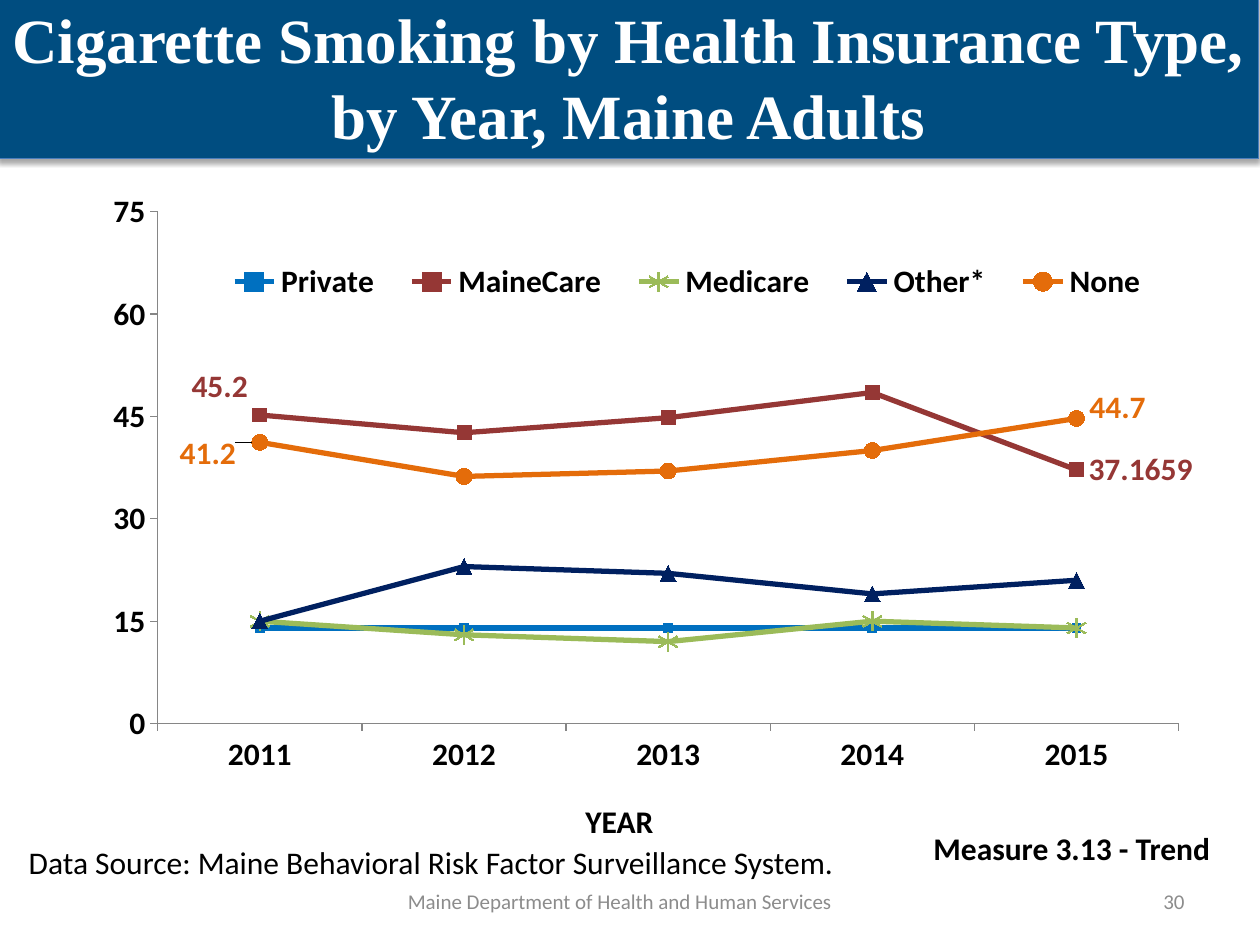
from dataclasses import dataclass
from typing import Any

from lxml.etree import SubElement
from pptx import Presentation
from pptx.chart.data import CategoryChartData
from pptx.dml.color import RGBColor
from pptx.enum.chart import XL_CHART_TYPE, XL_LABEL_POSITION, XL_LEGEND_POSITION, XL_MARKER_STYLE, XL_TICK_MARK
from pptx.enum.shapes import MSO_SHAPE
from pptx.enum.text import MSO_ANCHOR, PP_ALIGN
from pptx.oxml import parse_xml
from pptx.oxml.ns import nsdecls, qn
from pptx.util import Inches, Pt

COLUMNS, ROWS = 100, 75
SLIDE_WIDTH, SLIDE_HEIGHT = Inches(10), Inches(7.5)
NAVY, WHITE, BLACK, GRAY = "004D80", "FFFFFF", "000000", "8C8C8C"
YEARS = ["2011", "2012", "2013", "2014", "2015"]


@dataclass
class Area:
    column: float
    row: float
    columns: float
    rows: float

    def lengths(self) -> tuple[int, int, int, int]:
        across, down = SLIDE_WIDTH / COLUMNS, SLIDE_HEIGHT / ROWS
        return (round(self.column * across), round(self.row * down),
                round(self.columns * across), round(self.rows * down))


@dataclass
class PointLabel:
    index: int
    position: Any
    shift_x: float = 0
    shift_y: float = 0


@dataclass
class Trend:
    name: str
    values: tuple
    color: str
    marker: Any
    size: int
    labels: tuple = ()


@dataclass
class Caption:
    text: str
    area: Area
    size: int = 18
    color: str = BLACK
    bold: bool = False
    align: Any = PP_ALIGN.LEFT
    anchor: Any = MSO_ANCHOR.TOP
    wrap: bool = True


LEFT, RIGHT = XL_LABEL_POSITION.LEFT, XL_LABEL_POSITION.RIGHT
TRENDS = [
    Trend("Private", (14, 14, 14, 14, 14), "0070C0", XL_MARKER_STYLE.SQUARE, 5),
    Trend("MaineCare", (45.2, 42.6, 44.8079, 48.5, 37.1659), "953735", XL_MARKER_STYLE.SQUARE, 8,
          (PointLabel(0, LEFT, 0, -0.05), PointLabel(4, RIGHT))),
    Trend("Medicare", (15, 13, 12, 15, 14), "9BBB59", XL_MARKER_STYLE.STAR, 11),
    Trend("Other*", (15, 23, 22, 19, 21), "002060", XL_MARKER_STYLE.TRIANGLE, 9),
    Trend("None", (41.2, 36.2, 37, 40, 44.7), "E46C0A", XL_MARKER_STYLE.CIRCLE, 9,
          (PointLabel(0, LEFT, -0.01, 0.02), PointLabel(4, RIGHT, 0, -0.02))),
]
CAPTIONS = [
    Caption("30", Area(71.7, 69.5, 23.3, 4), 12, GRAY, align=PP_ALIGN.RIGHT, anchor=MSO_ANCHOR.MIDDLE),
    Caption("Maine Department of Health and Human Services", Area(29.2, 69.5, 40, 4), 12, GRAY,
            align=PP_ALIGN.CENTER, anchor=MSO_ANCHOR.MIDDLE),
    Caption("YEAR", Area(45.4, 63.2, 7.5, 4), bold=True, align=PP_ALIGN.CENTER, wrap=False),
    Caption("Data Source: Maine Behavioral Risk Factor Surveillance System.", Area(1.3, 66.4, 70.3, 4)),
    Caption("Measure 3.13 - Trend", Area(73.1, 65.3, 24.2, 4), bold=True, wrap=False),
]


def color_of(value: str) -> RGBColor:
    return RGBColor.from_string(value)


def format_font(font: Any, *, size: int = 18, color: str = BLACK, bold: bool = True,
                name: str = "Calibri") -> None:
    font.name, font.size, font.bold = name, Pt(size), bold
    font.color.rgb = color_of(color)


def write_text(shape: Any, text: str, *, align: Any, anchor: Any, wrap: bool = True, **font: Any) -> None:
    frame = shape.text_frame
    frame.word_wrap, frame.vertical_anchor = wrap, anchor
    para = frame.paragraphs[0]
    para.alignment = align
    span = para.add_run()
    span.text = text
    format_font(span.font, **font)


def add_title(page: Any) -> None:
    banner = page.shapes.add_shape(MSO_SHAPE.RECTANGLE, *Area(-0.2, -0.5, 100.1, 13.1).lengths())
    banner.fill.solid()
    banner.fill.fore_color.rgb = color_of(NAVY)
    banner.line.color.rgb = color_of("4B7EBC")
    banner.line.width = Pt(0.75)
    banner.shadow.inherit = False
    effects = banner._element.spPr.find(qn("a:effectLst"))
    effects.append(parse_xml(
        f'<a:outerShdw {nsdecls("a")} blurRad="40000" dist="23000" dir="5400000" rotWithShape="0">'
        '<a:srgbClr val="000000"><a:alpha val="35000"/></a:srgbClr></a:outerShdw>'))
    write_text(banner, "Cigarette Smoking by Health Insurance Type, by Year, Maine Adults",
               align=PP_ALIGN.CENTER, anchor=MSO_ANCHOR.MIDDLE, size=36, color=WHITE, name="Times New Roman")


def add_caption(page: Any, caption: Caption) -> None:
    box = page.shapes.add_textbox(*caption.area.lengths())
    write_text(box, caption.text, align=caption.align, anchor=caption.anchor, wrap=caption.wrap,
               size=caption.size, color=caption.color, bold=caption.bold)


def make_layout(**settings: Any) -> Any:
    layout = parse_xml(f'<c:layout {nsdecls("c")}/>')
    manual = SubElement(layout, qn("c:manualLayout"))
    for name, value in settings.items():
        SubElement(manual, qn(f"c:{name}")).set("val", str(value))
    return layout


def place_part(part: Any, before: str, layout: Any) -> None:
    for old in part.findall(qn("c:layout")):
        part.remove(old)
    part.find(qn(before)).addnext(layout)


def style_series(series: Any, trend: Trend) -> None:
    series.smooth = False
    series.format.line.color.rgb = color_of(trend.color)
    series.format.line.width = Pt(3)
    marker = series.marker
    marker.style, marker.size = trend.marker, trend.size
    marker.format.line.color.rgb = color_of(trend.color)
    if trend.marker == XL_MARKER_STYLE.STAR:
        marker.format.fill.background()
    else:
        marker.format.fill.solid()
        marker.format.fill.fore_color.rgb = color_of(trend.color)
    for label in trend.labels:
        data_label = series.points[label.index].data_label
        format_font(data_label.font, color=trend.color)
        data_label.position = label.position
        if label.shift_x or label.shift_y:
            part = series._element.xpath(f"c:dLbls/c:dLbl[c:idx/@val='{label.index}']")[0]
            place_part(part, "c:idx", make_layout(x=label.shift_x, y=label.shift_y))


def add_trend_chart(page: Any) -> None:
    data = CategoryChartData()
    data.categories = YEARS
    for trend in TRENDS:
        data.add_series(trend.name, trend.values)
    chart = page.shapes.add_chart(XL_CHART_TYPE.LINE_MARKERS, *Area(7.7, 15.3, 87.6, 46.1).lengths(), data).chart
    format_font(chart.font)
    chart.has_title = False
    chart.plots[0].vary_by_categories = False
    for axis in (chart.category_axis, chart.value_axis):
        axis.has_major_gridlines = False
        axis.major_tick_mark = XL_TICK_MARK.OUTSIDE
        axis.format.line.color.rgb = color_of("868686")
        format_font(axis.tick_labels.font)
    values = chart.value_axis
    values.minimum_scale, values.maximum_scale, values.major_unit = 0, 75, 15
    values.tick_labels.number_format, values.tick_labels.number_format_is_linked = "0", False
    chart.has_legend = True
    chart.legend.position = XL_LEGEND_POSITION.RIGHT
    chart.legend.include_in_layout = False
    format_font(chart.legend.font)
    place_part(chart.legend._element, "c:legendPos",
               make_layout(xMode="edge", yMode="edge", x=0.1, y=0.11, w=0.87, h=0.09))
    area = chart._chartSpace.chart.plotArea
    for old in area.findall(qn("c:layout")):
        area.remove(old)
    area.insert(0, make_layout(layoutTarget="inner", xMode="edge", yMode="edge",
                               x=0.055, y=0.033, w=0.925, h=0.891))
    for series, trend in zip(chart.plots[0].series, TRENDS):
        style_series(series, trend)


def main() -> None:
    deck = Presentation()
    deck.slide_width, deck.slide_height = SLIDE_WIDTH, SLIDE_HEIGHT
    page = deck.slides.add_slide(deck.slide_layouts[6])
    add_title(page)
    add_trend_chart(page)
    for caption in CAPTIONS:
        add_caption(page, caption)
    deck.save("out.pptx")


if __name__ == "__main__":
    main()
